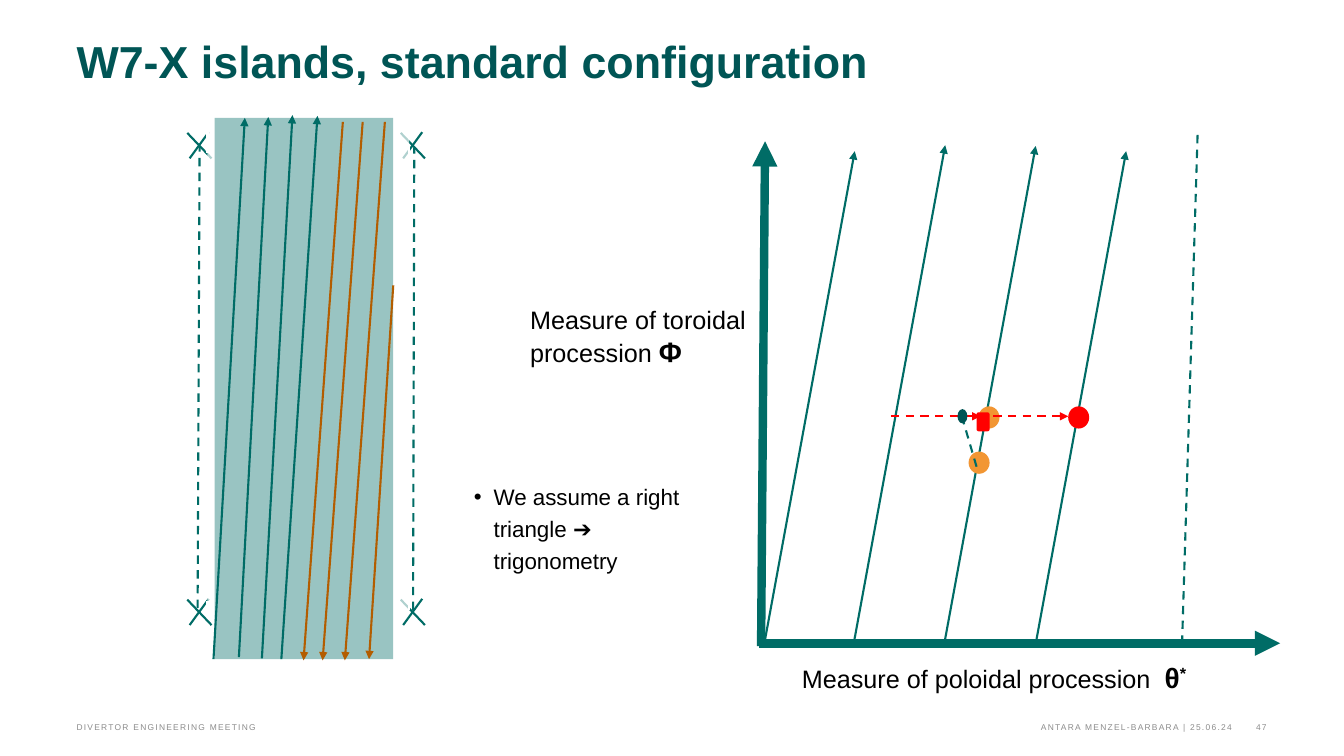
from lxml import etree
from pptx import Presentation
from pptx.dml.color import RGBColor
from pptx.enum.dml import MSO_LINE
from pptx.enum.shapes import MSO_CONNECTOR, MSO_SHAPE
from pptx.enum.text import MSO_ANCHOR, PP_ALIGN
from pptx.oxml.ns import qn
from pptx.util import Cm, Pt

STRAIGHT = MSO_CONNECTOR.STRAIGHT
RECT, ROUNDED, OVAL = MSO_SHAPE.RECTANGLE, MSO_SHAPE.ROUNDED_RECTANGLE, MSO_SHAPE.OVAL
DASH = MSO_LINE.DASH
TOP, BOTTOM = MSO_ANCHOR.TOP, MSO_ANCHOR.BOTTOM
LEFT, RIGHT = PP_ALIGN.LEFT, PP_ALIGN.RIGHT

THEME = {
    "font": "Arial",
    "colors": {name: RGBColor.from_string(code) for name, code in {
        "dark": "005555", "teal": "006C66", "panel": "99C4C2", "brown": "B35D00",
        "orange": "F29633", "red": "FF0000", "white": "FFFFFF",
        "black": "000000", "grey": "8C8C8C"}.items()},
    "sizes": {"title": Pt(32), "symbol": Pt(20), "label": Pt(18),
              "bullet": Pt(16), "footer": Pt(6)},
}
COLORS, SIZES = THEME["colors"], THEME["sizes"]

deck = Presentation()
deck.slide_width, deck.slide_height = Cm(33.87), Cm(19.05)
page = deck.slides.add_slide(deck.slide_layouts[5])


def draw_line(x1, y1, x2, y2, color="teal", arrow=False, dash=None, width=1.5):
    line = page.shapes.add_connector(STRAIGHT, Cm(x1), Cm(y1), Cm(x2), Cm(y2))
    line.line.color.rgb = COLORS[color]
    line.line.width = Pt(width)
    if dash:
        line.line.dash_style = dash
    if arrow:
        etree.SubElement(line.line._get_or_add_ln(), qn("a:tailEnd"), type="triangle")
    etree.SubElement(line._element.spPr, qn("a:effectLst"))


def draw_shape(kind, left, top, width, height, color):
    shape = page.shapes.add_shape(kind, Cm(left), Cm(top), Cm(width), Cm(height))
    shape.shadow.inherit = False
    shape.fill.solid()
    shape.fill.fore_color.rgb = COLORS[color]
    shape.line.fill.background()
    return shape


for left in (4.72, 10.1):
    for top in (3.33, 15.09):
        draw_line(left + 0.54, top, left + 0.06, top + 0.66)
        draw_line(left, top + 0.02, left + 0.61, top + 0.66)
draw_line(4.98, 15.32, 5.03, 3.71, dash=DASH)
draw_line(10.41, 15.37, 10.44, 3.73, dash=DASH)

veil = draw_shape(RECT, 5.23, 2.59, 5.08, 12.83, "white")
veil_color = veil._element.spPr.find(qn("a:solidFill"))[0]
etree.SubElement(veil_color, qn("a:alpha"), val="69000")
veil.line.color.rgb = COLORS["white"]
veil.line.width = Pt(1.5)
veil.line.dash_style = DASH
draw_shape(RECT, 5.41, 2.97, 4.5, 13.64, "panel")

for field_line in [(5.38, 16.61, 6.17, 2.97), (6.02, 16.56, 6.76, 2.95),
                   (6.6, 16.59, 7.37, 2.9), (7.09, 16.61, 8, 2.92)]:
    draw_line(*field_line, arrow=True)
for return_line in [(8.64, 3.07, 7.65, 16.64), (9.14, 3.07, 8.13, 16.64),
                    (9.7, 3.07, 8.69, 16.64), (9.91, 7.19, 9.3, 16.61)]:
    draw_line(*return_line, color="brown", arrow=True)

draw_line(19.18, 16.28, 19.28, 3.56, arrow=True, width=6)
draw_line(19.13, 16.21, 32.26, 16.21, arrow=True, width=6)
for index, bottom in enumerate((16.28, 16.13, 16.15, 16.28)):
    start = 19.25 + 2.28 * index
    draw_line(start, bottom, start + 2.29, bottom - 12.47, arrow=True)
draw_line(30.18, 3.4, 29.79, 16.18, dash=DASH)

for left, top, color in [(24.41, 11.38, "orange"), (24.66, 10.24, "orange"),
                         (26.92, 10.24, "red")]:
    draw_shape(OVAL, left, top, 0.53, 0.56, color)
draw_line(24.66, 10.49, 26.92, 10.49, "red", True, DASH)
draw_line(24.61, 11.76, 24.21, 10.39, dash=DASH)
draw_line(22.45, 10.49, 24.71, 10.49, "red", True, DASH)
draw_shape(OVAL, 24.13, 10.31, 0.25, 0.36, "dark")
draw_shape(ROUNDED, 24.61, 10.39, 0.33, 0.48, "red")

STYLES = {
    "title": {"color": "dark", "bold": True, "anchor": TOP, "inset": (0, 0), "leading": Pt(28)},
    "label": {"color": "black", "bold": False, "anchor": TOP, "inset": (0.25, 0.13), "leading": None},
    "bullet": {"color": "black", "bold": False, "anchor": TOP, "inset": (0, 0), "leading": Pt(23)},
    "footer": {"color": "grey", "bold": False, "anchor": BOTTOM, "inset": (0, 0), "leading": None},
}
TEXTS = [
    ("title", (1.93, 1.22, 26.59, 2.49), LEFT, ["W7-X islands, standard configuration"]),
    ("label", (13.11, 7.54, 5.94, 1.88), LEFT, ["Measure of toroidal procession ", "Φ"]),
    ("label", (19.96, 16.51, 10.64, 1.88), LEFT, ["Measure of poloidal procession  ", "θ", "*"]),
    ("bullet", (11.94, 12.04, 6.02, 2.46), LEFT, ["We assume a right triangle ➔ trigonometry"]),
    ("footer", (1.93, 18.03, 16.92, 0.41), LEFT, ["DIVERTOR ENGINEERING MEETING"]),
    ("footer", (11.46, 18.03, 19.58, 0.41), RIGHT, ["ANTARA MENZEL-BARBARA | 25.06.24"]),
    ("footer", (31.01, 18.03, 0.91, 0.41), RIGHT, ["47"]),
]
for role, place, align, pieces in TEXTS:
    style = STYLES[role]
    left, top, width, height = map(Cm, place)
    if role == "title":
        box = page.shapes.title
        box.left, box.top, box.width, box.height = left, top, width, height
    else:
        box = page.shapes.add_textbox(left, top, width, height)
    side, edge = map(Cm, style["inset"])
    frame_format = {"word_wrap": True, "vertical_anchor": style["anchor"],
                    "margin_left": side, "margin_right": side,
                    "margin_top": edge, "margin_bottom": edge}
    for name, value in frame_format.items():
        setattr(box.text_frame, name, value)
    para = box.text_frame.paragraphs[0]
    para.alignment = align
    para.line_spacing = style["leading"]
    if role == "bullet":
        properties = para._p.get_or_add_pPr()
        properties.set("marL", str(Cm(0.5)))
        properties.set("indent", str(-Cm(0.5)))
        etree.SubElement(properties, qn("a:buFont"), typeface=THEME["font"])
        etree.SubElement(properties, qn("a:buChar"), char="•")
    for position, piece in enumerate(pieces):
        span = para.add_run()
        span.text = piece
        font_format = {"name": THEME["font"],
                       "size": SIZES["symbol" if position else role],
                       "bold": style["bold"] or position > 0}
        for name, value in font_format.items():
            setattr(span.font, name, value)
        span.font.color.rgb = COLORS[style["color"]]
        if role == "footer":
            span._r.get_or_add_rPr().set("spc", "90")
        if piece == "*":
            span._r.get_or_add_rPr().set("baseline", "30000")

deck.save("out.pptx")
